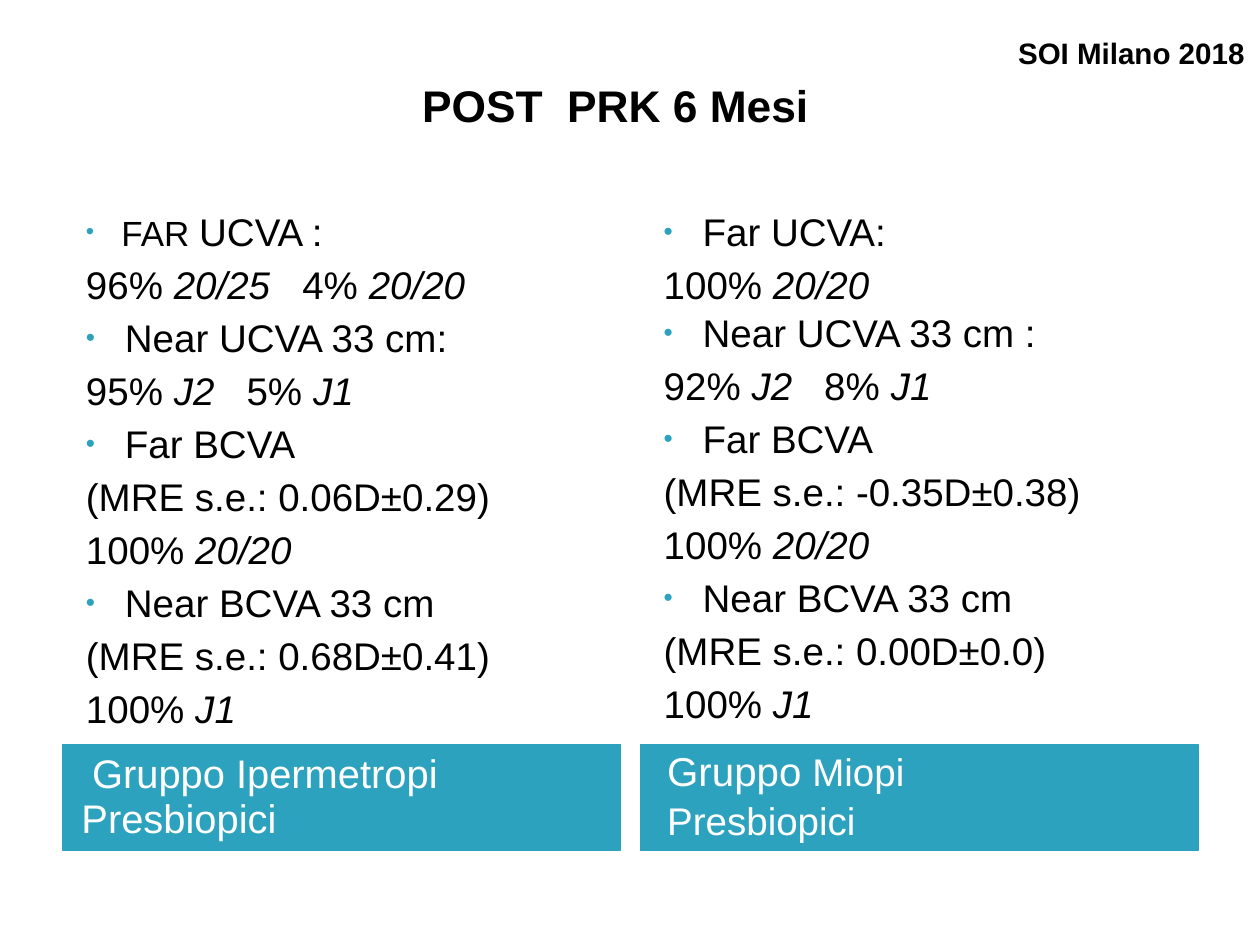
from lxml import etree
from pptx import Presentation
from pptx.dml.color import RGBColor
from pptx.enum import shapes, text
from pptx.oxml import ns
from pptx.util import Inches, Pt

# Content: a span is plain text or (text, format)
ITALIC = {"italic": True}
FAR_20 = ["100% ", ("20/20", ITALIC)]
NEAR_J1 = ["100% ", ("J1", ITALIC)]

TITLE = "POST  PRK 6 Mesi"
EVENT = "SOI Milano 2018"
GROUPS = [
    {
        "label": [[("Gruppo Ipermetropi Presbiopici", {"size": 32.4})]],
        "label_inset": 0.21, "label_indent": 0.12, "label_before": 3,
        "tight_tests": (),
        "tests": [
            (["FAR ", "UCVA :"],
             [["96% ", ("20/25", ITALIC), "   4% ", ("20/20", ITALIC)]]),
            (["Near UCVA 33 cm:"],
             [["95% ", ("J2", ITALIC), "   5% ", ("J1", ITALIC)]]),
            (["Far BCVA"], [["(MRE s.e.: 0.06D±0.29)"], FAR_20]),
            (["Near BCVA 33 cm"], [["(MRE s.e.: 0.68D±0.41)"], NEAR_J1]),
        ],
    },
    {
        "label": [[("Gruppo", {"size": 32.7}), " Miopi"], ["Presbiopici"]],
        "label_inset": 0.3, "label_indent": 0, "label_before": 4,
        "tight_tests": (0, 1),
        "tests": [
            (["Far UCVA:"], [FAR_20]),
            (["Near UCVA 33 cm :"],
             [["92% ", ("J2", ITALIC), "   8% ", ("J1", ITALIC)]]),
            (["Far BCVA"], [["(MRE s.e.: -0.35D±0.38)"], FAR_20]),
            (["Near BCVA 33 cm"], [["(MRE s.e.: 0.00D±0.0)"], NEAR_J1]),
        ],
    },
]
GROUPS[0]["tests"][0][0][0] = ("FAR ", {"size": 28.4})

# Layout
WIDTH, HEIGHT = 14.22, 10.67
MARGIN, GUTTER = 0.71, 0.23
COLUMN = (WIDTH - 2 * MARGIN - GUTTER) / 2
TESTS_TOP, TESTS_HEIGHT = 2.25, 6.13
LABEL_TOP, LABEL_HEIGHT = 8.41, 1.19
BODY_SIZE = 31.3

BLACK = RGBColor(0x00, 0x00, 0x00)
WHITE = RGBColor(0xFF, 0xFF, 0xFF)
TEAL = RGBColor(0x2D, 0xA2, 0xBF)


def add_span(para, words, size=BODY_SIZE, color=BLACK, bold=False, italic=False):
    span = para.add_run()
    span.text = words
    font = span.font
    font.name, font.size, font.bold, font.italic = "Arial", Pt(size), bold, italic
    font.color.rgb = color


def write(frame, spans, color=BLACK, before=0, spacing=1.0, margin=0, indent=0,
          bullet=False):
    """Add one paragraph, using the frame's empty first one if it is free."""
    first = frame.paragraphs[0]
    para = frame.add_paragraph() if first.runs else first
    para.alignment = text.PP_ALIGN.LEFT
    para.space_before = Pt(before)
    para.line_spacing = spacing
    properties = para._p.get_or_add_pPr()
    properties.set("marL", str(Inches(margin)))
    properties.set("indent", str(Inches(indent)))
    if bullet:
        bullet_color = etree.SubElement(properties, ns.qn("a:buClr"))
        etree.SubElement(bullet_color, ns.qn("a:srgbClr"), val=str(TEAL))
        etree.SubElement(properties, ns.qn("a:buSzPct"), val="68000")
        etree.SubElement(properties, ns.qn("a:buFont"), typeface="Arial")
        etree.SubElement(properties, ns.qn("a:buChar"), char="•")
    for span in spans:
        words, style = (span, {}) if isinstance(span, str) else span
        add_span(para, words, color=color, **style)


def set_frame(frame, insets, anchor, wrap=True):
    frame.word_wrap = wrap
    frame.auto_size = text.MSO_AUTO_SIZE.NONE
    frame.vertical_anchor = anchor
    (frame.margin_left, frame.margin_top,
     frame.margin_right, frame.margin_bottom) = map(Inches, insets)


def place(left, top, width, height):
    return [Inches(round(length, 2)) for length in (left, top, width, height)]


deck = Presentation()
deck.slide_width, deck.slide_height = Inches(WIDTH), Inches(HEIGHT)
page = deck.slides.add_slide(deck.slide_layouts[5])
MIDDLE, TOP = text.MSO_ANCHOR.MIDDLE, text.MSO_ANCHOR.TOP

# Title
title = page.shapes.title
title.left, title.top, title.width, title.height = place(4.7, 0.83, 4.49, 0.71)
set_frame(title.text_frame, [0.06] * 4, MIDDLE, wrap=False)
write(title.text_frame, [(TITLE, {"size": 36, "bold": True})])
title.text_frame.paragraphs[0].alignment = text.PP_ALIGN.CENTER

# Event name
event = page.shapes.add_textbox(*place(11.49, 0.4, 2.7, 0.4))
set_frame(event.text_frame, [0] * 4, MIDDLE, wrap=False)
write(event.text_frame, [(EVENT, {"size": 24, "bold": True})])

for column, group in enumerate(GROUPS):
    left = MARGIN + column * (COLUMN + GUTTER)

    # Test results
    box = page.shapes.add_textbox(*place(left, TESTS_TOP, COLUMN, TESTS_HEIGHT))
    set_frame(box.text_frame, (0.14, 0.08, 0.14, 0.08), TOP)
    for number, (heading, results) in enumerate(group["tests"]):
        before = 0 if number in group["tight_tests"] else 4
        write(box.text_frame, heading, before=before, spacing=1.04, bullet=True,
              margin=0.52 if heading[0][0] == "FAR " else 0.56,
              indent=-0.4 if heading[0][0] == "FAR " else -0.44)
        for result in results:
            write(box.text_frame, result, before=4, spacing=1.04,
                  margin=0.4, indent=-0.28)

    # Group label
    label = page.shapes.add_shape(shapes.MSO_SHAPE.RECTANGLE,
                                  *place(left, LABEL_TOP, COLUMN, LABEL_HEIGHT))
    label.shadow.inherit = False
    label.fill.solid()
    label.fill.fore_color.rgb = TEAL
    label.line.color.rgb = TEAL
    label.line.width = Pt(1.08)
    set_frame(label.text_frame, (group["label_inset"], 0.06, 0.1, 0.06), MIDDLE)
    for spans in group["label"]:
        write(label.text_frame, spans, color=WHITE, spacing=0.94,
              before=group["label_before"], indent=group["label_indent"])

deck.save("out.pptx")
